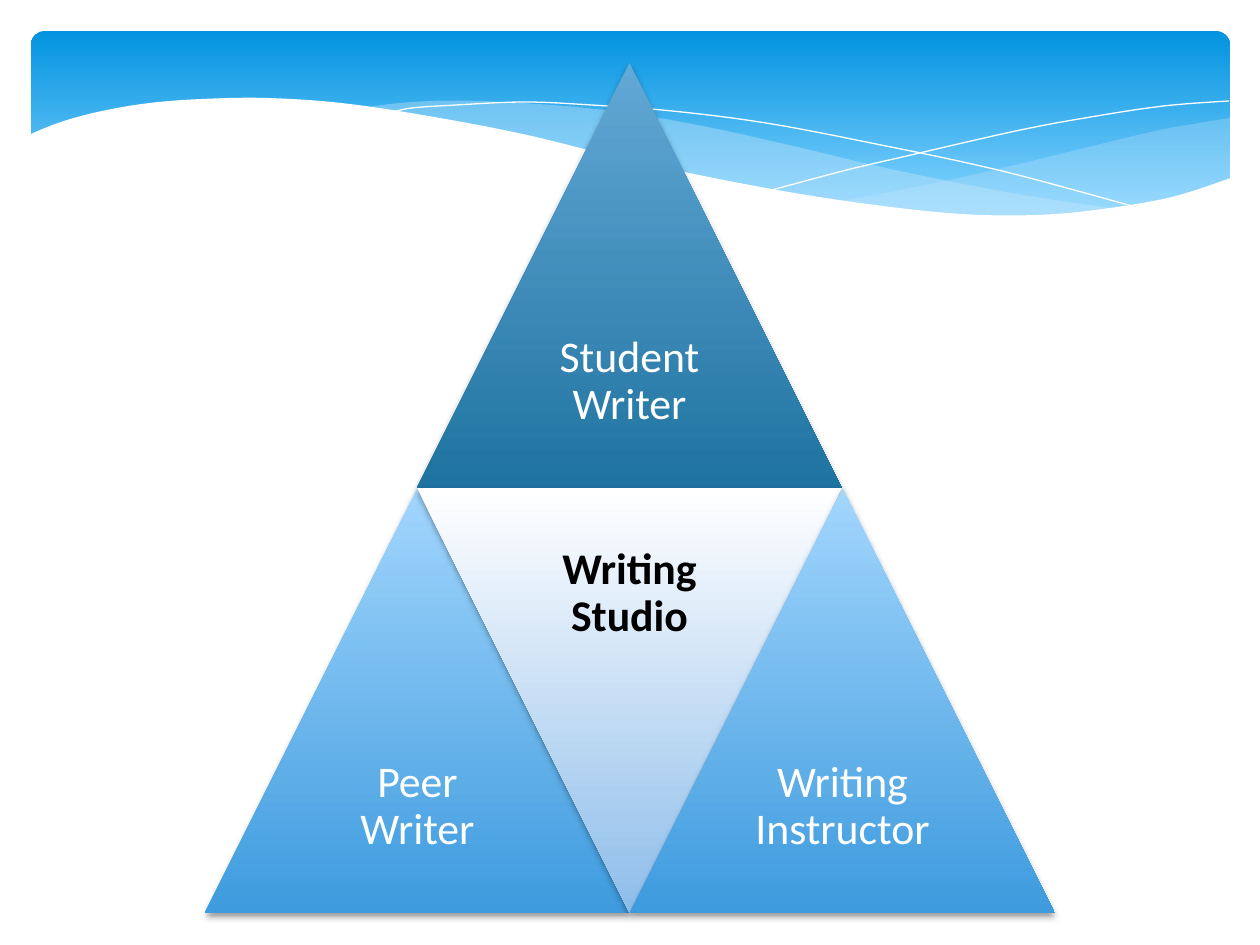
from dataclasses import dataclass

from lxml import etree
from pptx import Presentation
from pptx.dml.color import RGBColor
from pptx.enum import shapes, text
from pptx.oxml.ns import qn
from pptx import util as u

SCALE = 914400 / 126  # EMU per px
WHITE = RGBColor(0xFF, 0xFF, 0xFF)
BLACK = RGBColor(0, 0, 0)
MIST = RGBColor(0xC6, 0xE7, 0xFC)
SKY = (RGBColor(0x02, 0x93, 0xE0), RGBColor(0x83, 0xD3, 0xFE))
DEEP = (RGBColor(0x63, 0xA8, 0xD6), RGBColor(0x1F, 0x73, 0xA0))
LIGHT = (RGBColor(0xA2, 0xD6, 0xFD), RGBColor(0x3E, 0x9B, 0xDE))
PALE = (WHITE, RGBColor(0x8E, 0xBD, 0xEA))

SIDE = 425
LEFT, TOP = 205, 63

Point = tuple[float, float]


@dataclass(frozen=True)
class Wave:
    """Smooth curves joined end to end; a fill closes them, otherwise a hairline is drawn."""
    curves: list[list[Point]]
    fill: RGBColor | None = None
    opacity: int = 100


@dataclass(frozen=True)
class Triangle:
    label: str
    half_steps: int
    row: int
    gradient: tuple[RGBColor, RGBColor]
    inverted: bool = False


WAVES = [
    Wave([[(1230, 118), (1160, 130), (1085, 148), (981, 173), (886, 193), (833, 202)],
          [(833, 202), (906, 211), (984, 216), (1063, 217), (1131, 211), (1187, 200),
           (1230, 178)]], MIST, 29),
    Wave([[(1125, 210), (1017, 194), (890, 169), (793, 146), (682, 122), (586, 108),
           (479, 101), (413, 102), (360, 108)],
          [(360, 108), (456, 122), (566, 146), (713, 180), (819, 199), (911, 211),
           (1003, 217), (1080, 217), (1125, 210)]], MIST, 40),
    Wave([[(389, 113), (412, 108), (457, 105), (524, 102), (591, 105), (672, 111),
           (766, 123), (876, 144), (1002, 171), (1143, 209)]]),
    Wave([[(772, 190), (847, 170), (907, 156), (1016, 131), (1091, 117), (1164, 106),
           (1229, 101)]]),
    Wave([[(1231, 178), (1172, 197), (1103, 209), (1037, 215), (961, 214), (867, 204),
           (760, 187), (633, 161), (527, 135), (428, 116), (341, 103), (266, 98),
           (203, 99), (150, 103), (107, 110), (74, 118), (50, 126), (29, 135)],
          [(29, 282), (1231, 282)]], WHITE),
]

TRIANGLES = [
    Triangle("Student Writer", 1, 0, DEEP),
    Triangle("Peer Writer", 0, 1, LIGHT),
    Triangle("Writing Studio", 1, 1, PALE, inverted=True),
    Triangle("Writing Instructor", 2, 1, LIGHT),
]


def px(length: float) -> u.Emu:
    return u.Emu(round(length * SCALE))


def smooth(knots: list[Point], steps: int = 6) -> list[Point]:
    """Catmull-Rom curve through the knots."""
    padded = [knots[0], *knots, knots[-1]]
    points = [knots[0]]
    for a, b, c, d in zip(padded, padded[1:], padded[2:], padded[3:]):
        for step in range(1, steps + 1):
            t = step / steps
            points.append(tuple(
                (2 * q + (r - p) * t + (2 * p - 5 * q + 4 * r - s) * t ** 2
                 + (3 * q - p - 3 * r + s) * t ** 3) / 2
                for p, q, r, s in zip(a, b, c, d)))
    return points


def fill_gradient(shape, colors: tuple[RGBColor, RGBColor], end: float = 1.0) -> None:
    """Top-to-bottom gradient that stays upright when the shape turns."""
    shape.fill.gradient()
    shape.fill.gradient_angle = 270
    for stop, color, position in zip(shape.fill.gradient_stops, colors, (0, end)):
        stop.color.rgb = color
        stop.position = position
    shape._element.spPr.find(qn("a:gradFill")).set("rotWithShape", "0")
    shape.line.fill.background()


def set_opacity(color_element, percent: int) -> None:
    etree.SubElement(color_element, qn("a:alpha"), val=str(percent * 1000))


def add_shadow(shape) -> None:
    shape.shadow.inherit = False
    effects = shape._element.spPr.find(qn("a:effectLst"))
    shadow = etree.SubElement(effects, qn("a:outerShdw"), blurRad=str(u.Pt(4)),
                              dist=str(u.Pt(2)), dir="5400000", rotWithShape="0")
    set_opacity(etree.SubElement(shadow, qn("a:srgbClr"), val=str(BLACK)), 38)


def draw_header(page) -> None:
    header = page.shapes.add_shape(shapes.MSO_SHAPE.ROUNDED_RECTANGLE,
                                   px(31), px(31), px(1199), px(197))
    header.adjustments[0] = 0.07
    header.shadow.inherit = False
    fill_gradient(header, SKY, 0.9)


def draw_wave(page, wave: Wave) -> None:
    points = [(px(x), px(y)) for curve in wave.curves for x, y in smooth(curve)]
    builder = page.shapes.build_freeform(*points[0])
    builder.add_line_segments(points[1:], close=wave.fill is not None)
    shape = builder.convert_to_shape()
    shape.shadow.inherit = False
    if wave.fill is None:
        shape.fill.background()
        shape.line.color.rgb = WHITE
        shape.line.width = u.Pt(0)
        return
    shape.fill.solid()
    shape.fill.fore_color.rgb = wave.fill
    shape.line.fill.background()
    if wave.opacity < 100:
        set_opacity(shape._element.spPr.find(qn("a:solidFill"))[0], wave.opacity)


def draw_triangle(page, item: Triangle) -> None:
    left = LEFT + item.half_steps * SIDE // 2
    top = TOP + item.row * SIDE
    shape = page.shapes.add_shape(shapes.MSO_SHAPE.ISOSCELES_TRIANGLE,
                                  px(left), px(top), px(SIDE), px(SIDE))
    shape.rotation = 180 if item.inverted else 0
    fill_gradient(shape, item.gradient)
    add_shadow(shape)

    half = SIDE / 2
    box = page.shapes.add_textbox(px(left + half / 2),
                                  px(top if item.inverted else top + half),
                                  px(half), px(half))
    frame = box.text_frame
    frame.word_wrap = True
    frame.vertical_anchor = text.MSO_ANCHOR.MIDDLE
    frame.margin_left = frame.margin_right = px(12)
    frame.margin_top = frame.margin_bottom = px(12)
    para = frame.paragraphs[0]
    para.alignment = text.PP_ALIGN.CENTER
    para.line_spacing = 0.9
    span = para.add_run()
    span.text = item.label
    span.font.name = "Calibri"
    span.font.size = u.Pt(25)
    span.font.bold = item.inverted
    span.font.color.rgb = BLACK if item.inverted else WHITE


def main() -> None:
    deck = Presentation()
    deck.slide_width, deck.slide_height = px(1260), px(945)
    page = deck.slides.add_slide(deck.slide_layouts[6])
    draw_header(page)
    for wave in WAVES:
        draw_wave(page, wave)
    for item in TRIANGLES:
        draw_triangle(page, item)
    deck.save("out.pptx")


if __name__ == "__main__":
    main()
